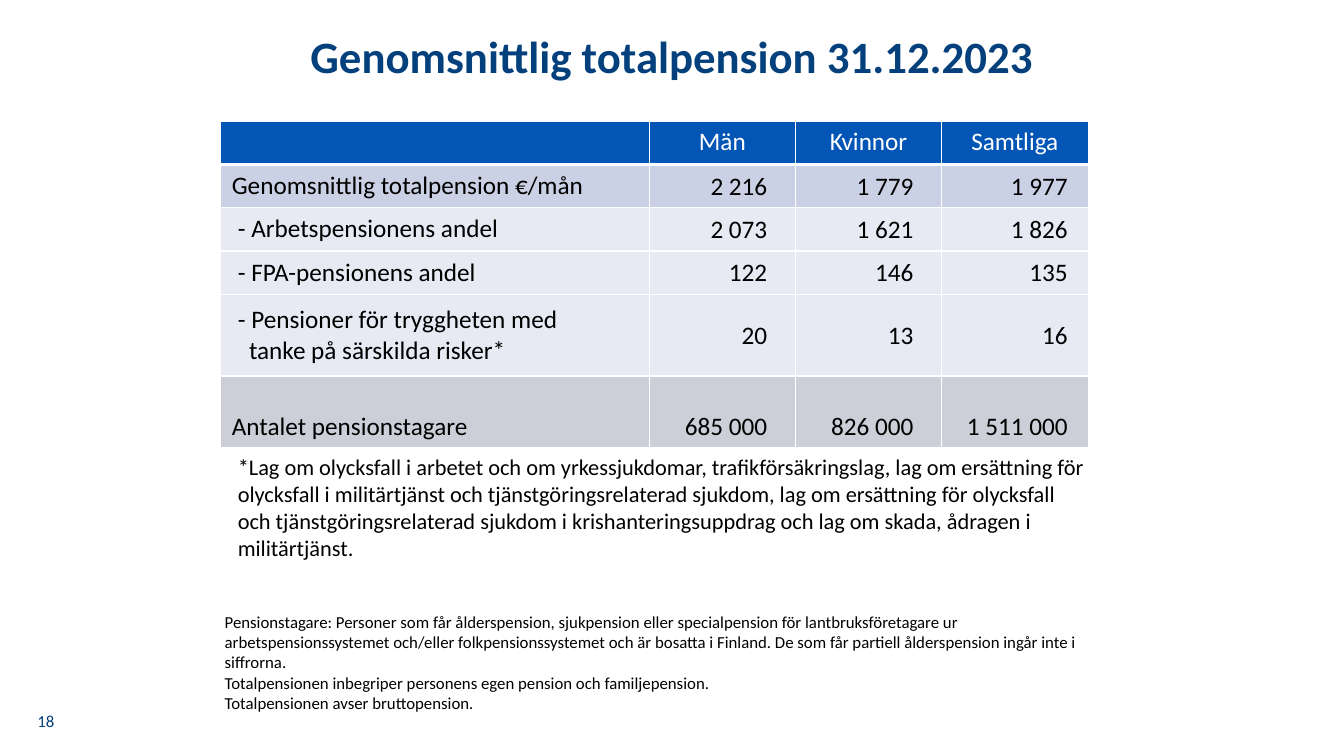
from lxml import etree
from pptx import Presentation
from pptx.dml.color import RGBColor
from pptx.enum.text import MSO_ANCHOR as Anchor, PP_ALIGN as Align
from pptx.oxml.ns import qn
from pptx.util import Inches, Pt

NAVY = RGBColor(0x03, 0x40, 0x7C)
BLUE = RGBColor(0x03, 0x56, 0xB5)
LILAC = RGBColor(0xCB, 0xD1, 0xE5)
PALE = RGBColor(0xE7, 0xE9, 0xF3)
GREY = RGBColor(0xCC, 0xCF, 0xD7)
WHITE = RGBColor(0xFF, 0xFF, 0xFF)
BLACK = RGBColor(0, 0, 0)

COLS = [4.26, 1.45, 1.45, 1.45]
HEADS = ["", "Män", "Kvinnor", "Samtliga"]
BODY = [
    (0.43, LILAC, "Genomsnittlig totalpension €/mån", "2 216", "1 779", "1 977"),
    (0.43, PALE, "- Arbetspensionens andel", "2 073", "1 621", "1 826"),
    (0.43, PALE, "- FPA-pensionens andel", "122", "146", "135"),
    (0.81, PALE, "- Pensioner för tryggheten med\vtanke på särskilda risker*",
     "20", "13", "16"),
    (0.65, GREY, "Antalet pensionstagare", "685 000", "826 000", "1 511 000"),
]
LAW = (
    "*Lag om olycksfall i arbetet och om yrkessjukdomar, trafikförsäkringslag, "
    "lag om ersättning för olycksfall i militärtjänst och tjänstgöringsrelaterad "
    "sjukdom, lag om ersättning för olycksfall och tjänstgöringsrelaterad sjukdom "
    "i krishanteringsuppdrag och lag om skada, ådragen i militärtjänst."
)
NOTES = [
    "Pensionstagare: Personer som får ålderspension, sjukpension eller "
    "specialpension för lantbruksföretagare ur arbetspensionssystemet och/eller "
    "folkpensionssystemet och är bosatta i Finland. De som får partiell "
    "ålderspension ingår inte i siffrorna.",
    "Totalpensionen inbegriper personens egen pension och familjepension.",
    "Totalpensionen avser bruttopension.",
]


def style(frame, size, color, align=Align.LEFT, bold=False):
    for para in frame.paragraphs:
        para.alignment = align
        for run in para.runs:
            font = run.font
            font.name, font.size, font.bold = "Calibri", Pt(size), bold
            font.color.rgb = color


def add_title(slide, text):
    title = slide.shapes.title
    title.left, title.top = Inches(0.18), Inches(0.29)
    title.width, title.height = Inches(12.97), Inches(0.84)
    frame = title.text_frame
    frame.text = text
    frame.vertical_anchor = Anchor.TOP
    frame.paragraphs[0].line_spacing = 0.9
    style(frame, 32, NAVY, Align.CENTER, True)


def add_text(slide, box, text, size, color, align=Align.LEFT, anchor=Anchor.TOP):
    shape = slide.shapes.add_textbox(*[Inches(n) for n in box])
    frame = shape.text_frame
    frame.word_wrap = True
    frame.vertical_anchor = anchor
    frame.text = text
    style(frame, size, color, align)


def set_edges(cell, widths):
    """Draw white borders; widths are left, right, top, bottom in points."""
    props = cell._tc.get_or_add_tcPr()
    for spot, (side, width) in enumerate(zip("LRTB", widths)):
        line = etree.Element(qn(f"a:ln{side}"), w=str(Pt(width)))
        fill = etree.SubElement(line, qn("a:solidFill"))
        etree.SubElement(fill, qn("a:srgbClr"), val=str(WHITE))
        props.insert(spot, line)


def set_cell(cell, text, fill, color, align, pads):
    cell.fill.solid()
    cell.fill.fore_color.rgb = fill
    cell.margin_left, cell.margin_right = [Inches(n) for n in pads]
    cell.text = text
    style(cell.text_frame, 18, color, align)


def set_label(cell, text, fill):
    share = text.startswith("-")
    set_cell(cell, text, fill, BLACK, Align.LEFT, (0.18 if share else 0.12, 0.04))
    cell.vertical_anchor = Anchor.MIDDLE
    if share:
        props = cell.text_frame.paragraphs[0]._p.get_or_add_pPr()
        props.set("marL", str(Inches(0.11)))
        props.set("indent", str(-Inches(0.11)))


def add_grid(slide):
    last = len(BODY)
    frame = slide.shapes.add_table(last + 1, len(COLS), Inches(2.18), Inches(1.2),
                                   Inches(8.61), Inches(3.18))
    table = frame.table
    table.first_row = table.horz_banding = False
    for col, width in zip(table.columns, COLS):
        col.width = Inches(width)
    table.rows[0].height = Inches(0.43)
    for cell, head in zip(table.rows[0].cells, HEADS):
        set_cell(cell, head, BLUE, WHITE, Align.CENTER, (0.1, 0.1))

    for r, (height, fill, label, *values) in enumerate(BODY, 1):
        table.rows[r].height = Inches(height)
        set_label(table.cell(r, 0), label, fill)
        for c, value in enumerate(values, 1):
            cell = table.cell(r, c)
            pad = 0.2 if c == len(values) else 0.28
            set_cell(cell, value, fill, BLACK, Align.RIGHT, (0.01, pad))
            if r < last:
                cell.vertical_anchor = Anchor.MIDDLE
                cell.margin_top, cell.margin_bottom = Inches(0.01), 0
    for cell in table.rows[last].cells:
        cell.text_frame.paragraphs[0].line_spacing = 2.0

    across = [0.25] + [1] * (len(COLS) - 1) + [0.25]
    down = [0.25, 2.25] + [1] * (last - 1) + [0.25]
    for r, row in enumerate(table.rows):
        for c, cell in enumerate(row.cells):
            set_edges(cell, across[c:c + 2] + down[r:r + 2])


def main():
    deck = Presentation()
    deck.slide_width, deck.slide_height = Inches(13.33), Inches(7.5)
    slide = deck.slides.add_slide(deck.slide_layouts[5])
    add_title(slide, "Genomsnittlig totalpension 31.12.2023")
    add_grid(slide)
    add_text(slide, (2.26, 4.45, 8.61, 1.18), LAW, 16, BLACK)
    add_text(slide, (2.13, 6.02, 9.08, 1.11), "\n".join(NOTES), 12, BLACK)
    add_text(slide, (0.2, 6.95, 0.51, 0.4), "18", 12, NAVY,
             Align.CENTER, Anchor.MIDDLE)
    deck.save("out.pptx")


if __name__ == "__main__":
    main()
